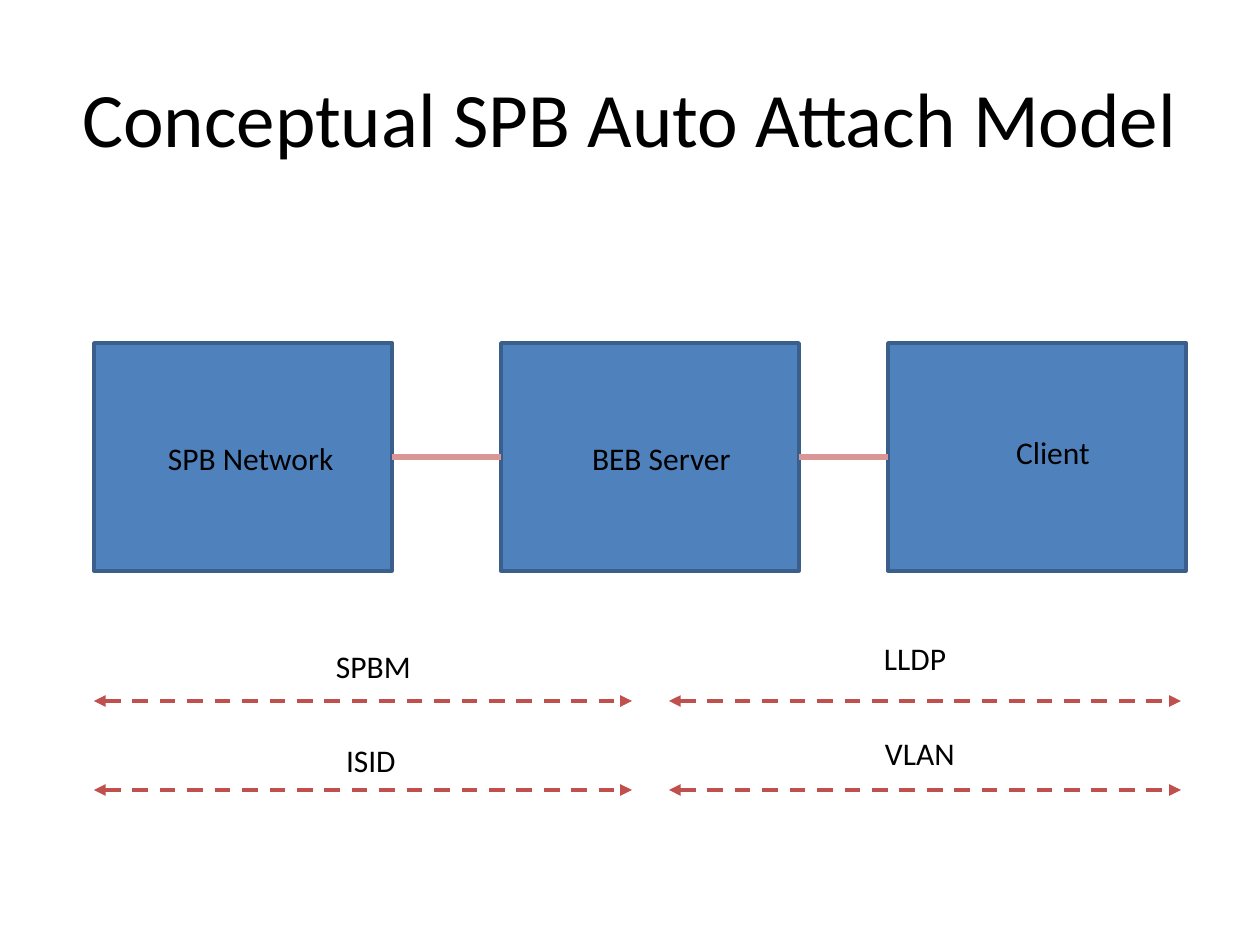
from dataclasses import dataclass

from lxml import etree
from pptx import Presentation
from pptx import util as u
from pptx.dml.color import RGBColor
from pptx.enum import dml, shapes, text
from pptx.oxml.ns import qn

PX_PER_INCH = 126


def px(length):
    return u.Emu(round(length * 914400 / PX_PER_INCH))


@dataclass(frozen=True)
class Theme:
    font: str = "Calibri"
    ink: str = "000000"
    node: str = "4F81BD"
    node_edge: str = "3A5F8C"
    link: str = "D99694"
    span: str = "C0504D"
    title_size: int = 44
    label_size: int = 18
    inset: int = 13


class Painter:
    def __init__(self, page, theme):
        self.page = page
        self.theme = theme

    def apply(self, target, values):
        for name, value in values.items():
            setattr(target, name, value)

    def fill_text(self, frame, words, size, **layout):
        self.apply(frame, layout)
        para = frame.paragraphs[0]
        span = para.add_run()
        span.text = words
        self.apply(span.font, {"name": self.theme.font, "size": u.Pt(size)})
        span.font.color.rgb = RGBColor.from_string(self.theme.ink)
        return para

    def stroke(self, line, color, width):
        line.color.rgb = RGBColor.from_string(color)
        line.width = u.Pt(width)

    def title(self, words, *area):
        box = self.page.shapes.title
        self.apply(box, dict(zip(("left", "top", "width", "height"), map(px, area))))
        para = self.fill_text(box.text_frame, words, self.theme.title_size,
                              vertical_anchor=text.MSO_ANCHOR.MIDDLE, word_wrap=True)
        para.alignment = text.PP_ALIGN.CENTER

    def node(self, *area):
        box = self.page.shapes.add_shape(shapes.MSO_SHAPE.RECTANGLE, *map(px, area))
        box.shadow.inherit = False
        box.fill.solid()
        box.fill.fore_color.rgb = RGBColor.from_string(self.theme.node)
        self.stroke(box.line, self.theme.node_edge, 2)

    def label(self, words, left, top, width, indent=0):
        box = self.page.shapes.add_textbox(*map(px, (left, top, width, 50)))
        self.fill_text(box.text_frame, words, self.theme.label_size,
                       word_wrap=False, auto_size=text.MSO_AUTO_SIZE.SHAPE_TO_FIT_TEXT,
                       margin_left=px(self.theme.inset + indent))

    def line(self, start, end, y, color, width):
        line = self.page.shapes.add_connector(
            shapes.MSO_CONNECTOR.STRAIGHT, *map(px, (start, y, end, y)))
        self.stroke(line.line, color, width)
        etree.SubElement(line._element.spPr, qn("a:effectLst"))
        return line

    def link(self, start, end, y):
        self.line(start, end, y, self.theme.link, 3)

    def reach(self, start, end, y):
        line = self.line(start, end, y, self.theme.span, 2.25).line
        line.dash_style = dml.MSO_LINE.DASH
        for tip in ("a:headEnd", "a:tailEnd"):
            etree.SubElement(line._get_or_add_ln(), qn(tip), type="triangle")


def main():
    deck = Presentation()
    deck.slide_width, deck.slide_height = px(1260), px(945)
    page = deck.slides.add_slide(deck.slide_layouts[5])
    painter = Painter(page, Theme())

    painter.title("Conceptual SPB Auto Attach Model", 63, 38, 1134, 157)

    # Network nodes
    node_lefts = (94, 501, 888)
    node_top, node_width, node_height = 343, 298, 228
    for left in node_lefts:
        painter.node(left, node_top, node_width, node_height)

    # Node names
    for name in (("SPB Network", 134, 433, 218, 21),
                 ("BEB Server", 551, 433, 208, 28),
                 ("Client", 968, 427, 169, 35)):
        painter.label(*name)

    # Links between neighbouring nodes
    for left, following in zip(node_lefts, node_lefts[1:]):
        painter.link(left + node_width, following, node_top + node_height // 2)

    # Reach of each protocol and identifier
    for y in (701, 790):
        for start, end in ((94, 632), (669, 1181)):
            painter.reach(start, end, y)

    for words, left, top in (("SPBM", 323, 641), ("LLDP", 871, 633),
                             ("ISID", 333, 735), ("VLAN", 872, 728)):
        painter.label(words, left, top, 110)

    deck.save("out.pptx")


if __name__ == "__main__":
    main()
